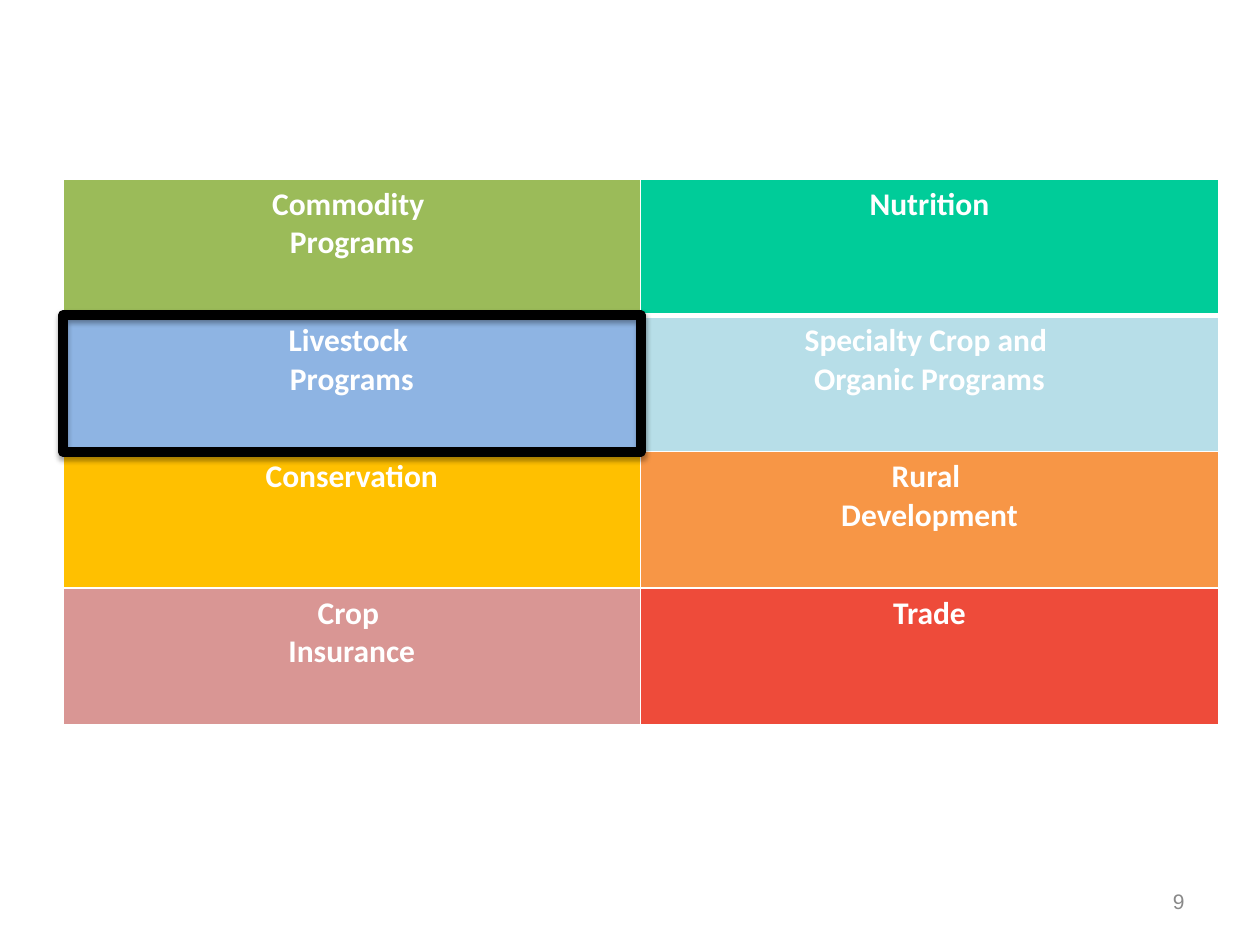
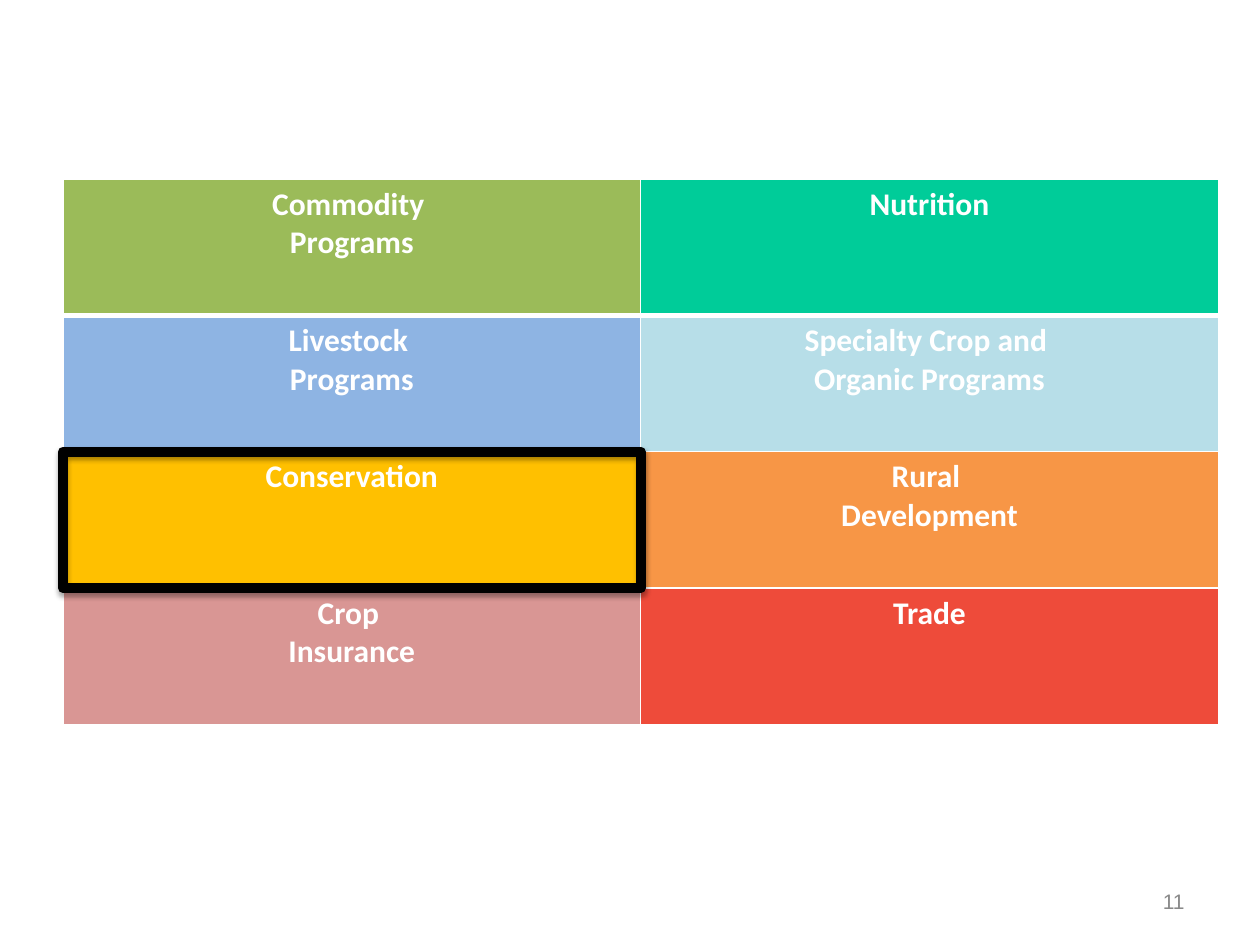
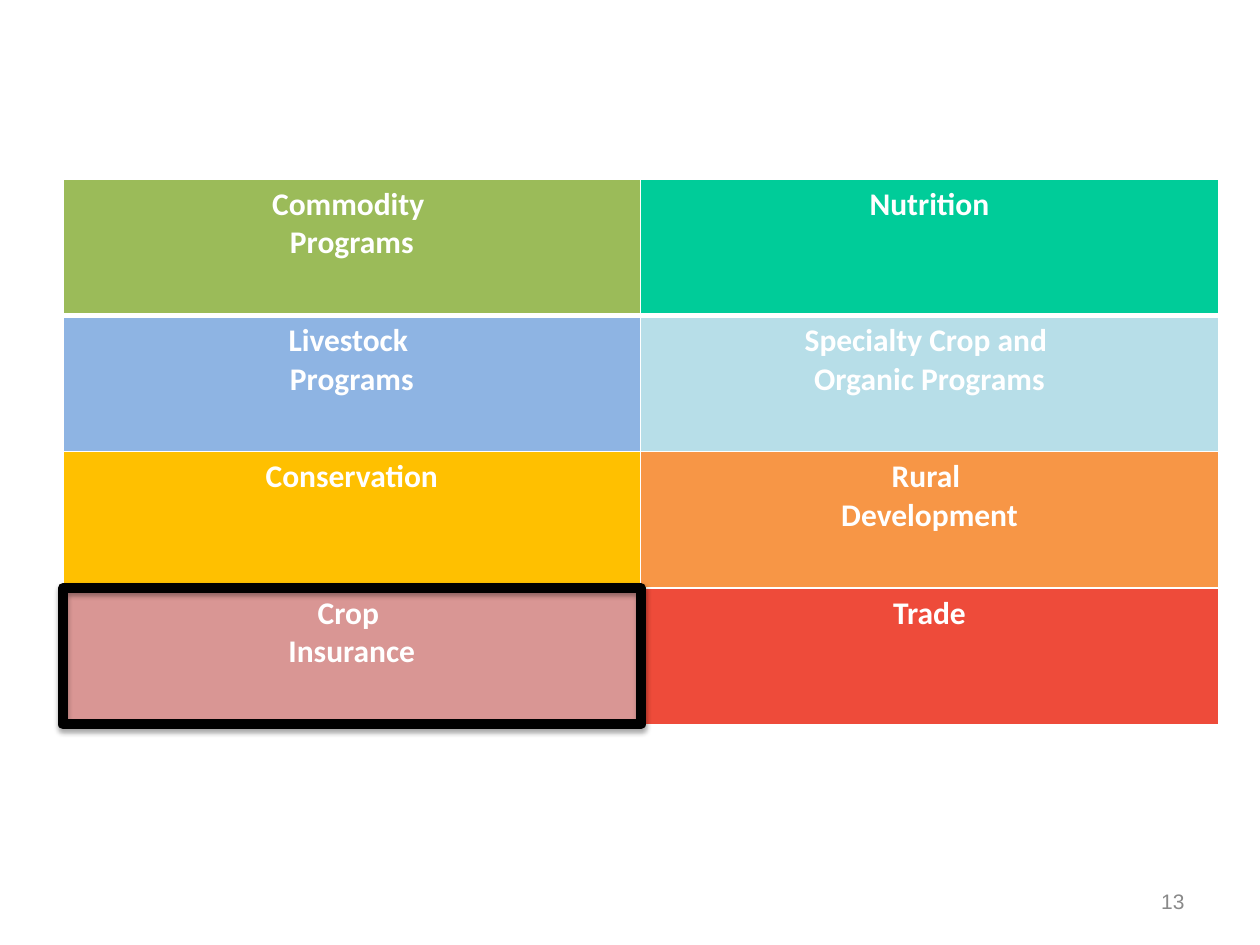
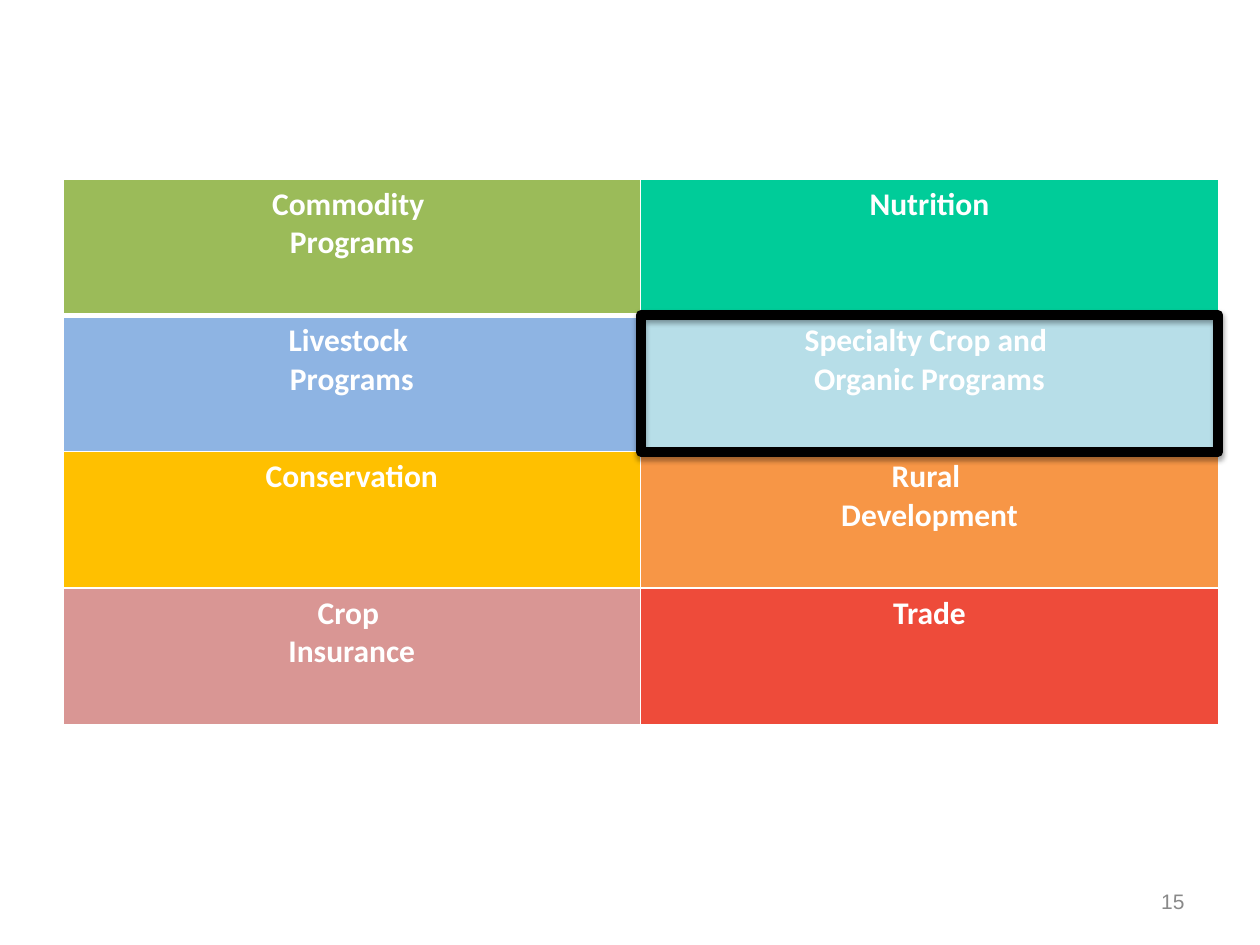
import lxml.etree
import pptx
import pptx.dml.color
import pptx.enum.shapes
import pptx.enum.text
import pptx.oxml.ns
import pptx.util

RGB = pptx.dml.color.RGBColor
Pt = pptx.util.Pt
ALIGN = pptx.enum.text.PP_ALIGN
WHITE = RGB(0xFF, 0xFF, 0xFF)
BLACK = RGB(0x00, 0x00, 0x00)
GRAY = RGB(0x89, 0x89, 0x89)
GREEN = RGB(0x9B, 0xBB, 0x59)
TEAL = RGB(0x00, 0xCC, 0x99)
BLUE = RGB(0x8E, 0xB4, 0xE3)
PALE_BLUE = RGB(0xB7, 0xDE, 0xE8)
GOLD = RGB(0xFF, 0xC0, 0x00)
ORANGE = RGB(0xF7, 0x96, 0x46)
ROSE = RGB(0xD9, 0x96, 0x94)
RED = RGB(0xEE, 0x4B, 0x3A)

PROGRAMS = [
    [("Commodity \nPrograms", GREEN), ("Nutrition", TEAL)],
    [("Livestock \nPrograms", BLUE), ("Specialty Crop and \nOrganic Programs", PALE_BLUE)],
    [("Conservation", GOLD), ("Rural \nDevelopment", ORANGE)],
    [("Crop \nInsurance", ROSE), ("Trade", RED)],
]
SLIDES = [
    {"number": 9, "row": 1, "col": 0},
    {"number": 11, "row": 2, "col": 0},
    {"number": 13, "row": 3, "col": 0},
    {"number": 15, "row": 1, "col": 1},
]

WIDTH, HEIGHT = pptx.util.Inches(10), pptx.util.Inches(7.5)
LEFT, TOP = pptx.util.Inches(0.5), pptx.util.Inches(1.42)
ROWS, COLS = len(PROGRAMS), len(PROGRAMS[0])
COL_W = pptx.util.Inches(9.17) // COLS
ROW_H = pptx.util.Inches(4.33) // ROWS
NUMBER_BOX = [pptx.util.Inches(v) for v in (7.17, 6.95, 2.33, 0.4)]

CELL_FONT = {"name": "Calibri", "size": Pt(18), "bold": True}
NUMBER_FONT = {"name": "Arial", "size": Pt(12)}
PLAIN_TABLE = {"first_row": False, "horz_banding": False}


def set_all(obj, values):
    for name, value in values.items():
        setattr(obj, name, value)


def add_xml(parent, tag, **attrs):
    return lxml.etree.SubElement(
        parent, pptx.oxml.ns.qn(tag), {k: str(v) for k, v in attrs.items()})


def write(tf, text, align, font, color):
    tf.text = text
    for p in tf.paragraphs:
        p.alignment = align
        for r in p.runs:
            set_all(r.font, font)
            r.font.color.rgb = color


def set_borders(cell, widths):
    props = cell._tc.get_or_add_tcPr()
    for i, (side, width) in enumerate(widths.items()):
        line = lxml.etree.Element(pptx.oxml.ns.qn("a:ln" + side), w=str(Pt(width)))
        add_xml(add_xml(line, "a:solidFill"), "a:srgbClr", val=WHITE)
        props.insert(i, line)


def add_programs(s):
    table = s.shapes.add_table(ROWS, COLS, LEFT, TOP, COL_W * COLS, ROW_H * ROWS).table
    set_all(table, PLAIN_TABLE)
    for i, row in enumerate(PROGRAMS):
        for j, (text, color) in enumerate(row):
            cell = table.cell(i, j)
            cell.fill.solid()
            cell.fill.fore_color.rgb = color
            write(cell.text_frame, text, ALIGN.CENTER, CELL_FONT, WHITE)
            set_borders(cell, {"L": 1, "R": 1, "T": 3 if i == 1 else 1, "B": 3 if i == 0 else 1})


def add_highlight(s, row, col):
    sp = s.shapes.add_shape(
        pptx.enum.shapes.MSO_SHAPE.RECTANGLE,
        LEFT + col * COL_W, TOP + row * ROW_H, COL_W, ROW_H)
    sp.fill.background()
    sp.line.color.rgb = BLACK
    sp.line.width = Pt(5.75)
    add_xml(sp.line._get_or_add_ln(), "a:round")
    sp.shadow.inherit = False
    effects = sp._element.spPr.find(pptx.oxml.ns.qn("a:effectLst"))
    shadow = add_xml(effects, "a:outerShdw", blurRad=Pt(3.1), dist=Pt(1.8),
                     dir=90 * 60000, rotWithShape=0)
    add_xml(add_xml(shadow, "a:srgbClr", val=BLACK), "a:alpha", val=35000)


def add_number(s, number):
    tf = s.shapes.add_textbox(*NUMBER_BOX).text_frame
    set_all(tf, {"word_wrap": True, "vertical_anchor": pptx.enum.text.MSO_ANCHOR.MIDDLE})
    write(tf, str(number), ALIGN.RIGHT, NUMBER_FONT, GRAY)


def main():
    prs = pptx.Presentation()
    set_all(prs, {"slide_width": WIDTH, "slide_height": HEIGHT})
    for item in SLIDES:
        s = prs.slides.add_slide(prs.slide_layouts[6])
        add_number(s, item["number"])
        add_programs(s)
        add_highlight(s, item["row"], item["col"])
    prs.save("out.pptx")


if __name__ == "__main__":
    main()
